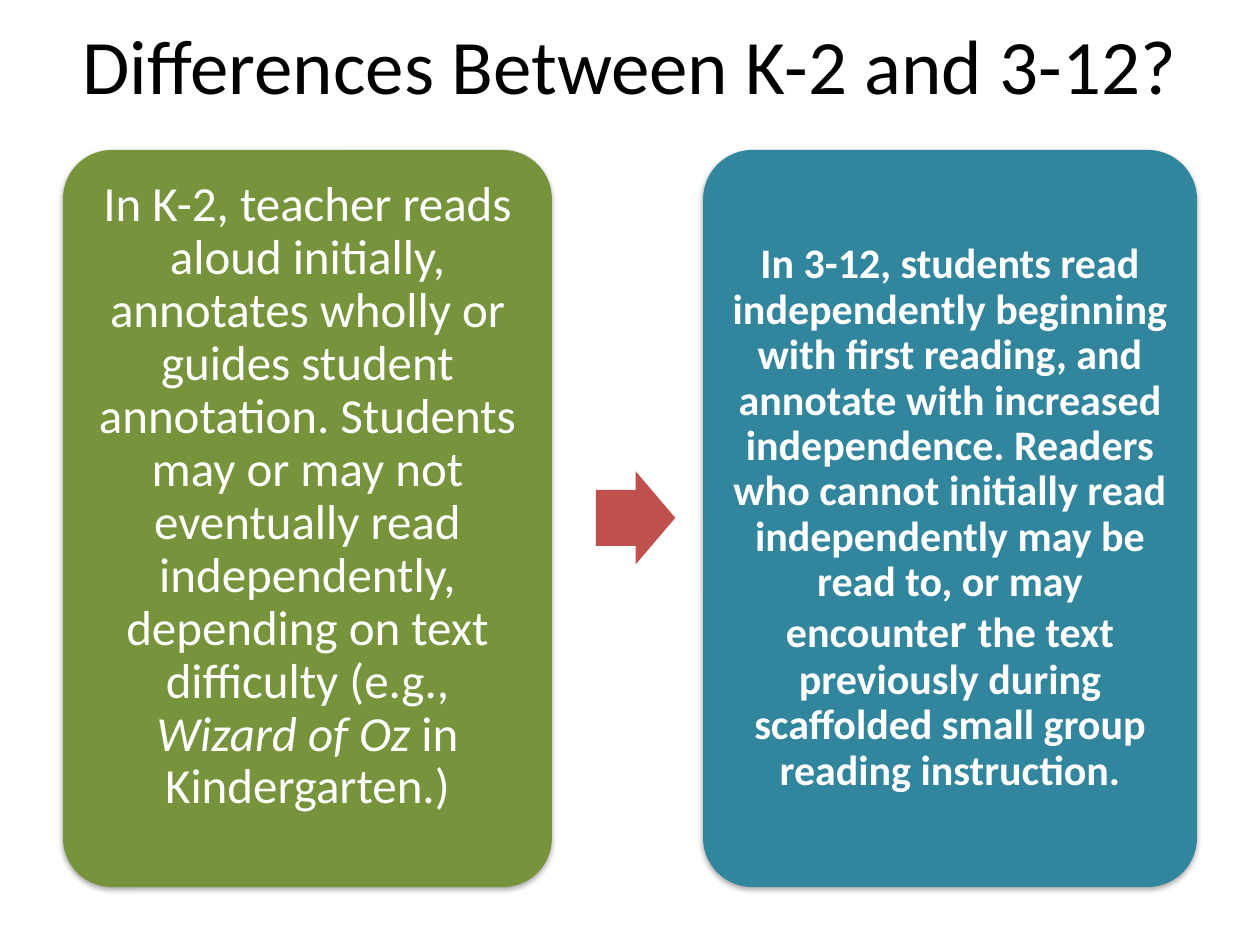
from lxml import etree
from pptx import Presentation
from pptx.dml.color import RGBColor
from pptx.enum.shapes import MSO_SHAPE
from pptx.enum.text import MSO_ANCHOR, PP_ALIGN
from pptx.oxml import parse_xml
from pptx.oxml.ns import nsdecls
from pptx.util import Inches, Pt

ROUNDED, ARROW = MSO_SHAPE.ROUNDED_RECTANGLE, MSO_SHAPE.RIGHT_ARROW
TOP, MIDDLE = MSO_ANCHOR.TOP, MSO_ANCHOR.MIDDLE
CENTER = PP_ALIGN.CENTER

BLACK = RGBColor(0x00, 0x00, 0x00)
WHITE = RGBColor(0xFF, 0xFF, 0xFF)
GREEN = RGBColor(0x77, 0x93, 0x3C)
TEAL = RGBColor(0x31, 0x85, 0x9C)
RED = RGBColor(0xC0, 0x50, 0x4D)
FONT = "Calibri"

SHADOW = (
    f'<a:effectLst {nsdecls("a")}><a:outerShdw blurRad="{Pt(3.1)}" dist="{Pt(1.8)}" '
    'dir="5400000" rotWithShape="0"><a:srgbClr val="000000"><a:alpha val="35000"/>'
    '</a:srgbClr></a:outerShdw></a:effectLst>'
)


def add_block(kind, left, top, width, height, color):
    block = slide.shapes.add_shape(
        kind, Inches(left), Inches(top), Inches(width), Inches(height))
    block.shadow.inherit = False
    block.fill.solid()
    block.fill.fore_color.rgb = color
    block.line.fill.background()
    return block


prs = Presentation()
prs.slide_width, prs.slide_height = Inches(10), Inches(7.5)
slide = prs.slides.add_slide(prs.slide_layouts[5])

# Title
title = slide.shapes.title
title.left, title.top = Inches(0.5), Inches(-0.12)
title.width, title.height = Inches(9), Inches(1.25)
title.text_frame.text = "Differences Between K-2 and 3-12?"
title.text_frame.vertical_anchor = MIDDLE
heading = title.text_frame.paragraphs[0]
heading.alignment = CENTER
heading.font.name, heading.font.size = FONT, Pt(44)
heading.font.color.rgb = BLACK

# Grade bands: left, width, colour, anchor, inset, size, bold, runs (text, size, italic)
grade_bands = [
    (0.5, 3.88, GREEN, TOP, 0.12, 28, False, [
        ("In K-2, teacher reads aloud initially, annotates wholly or guides student "
         "annotation. Students may or may not eventually read independently, "
         "depending on text difficulty (e.g., ", None, None),
        ("Wizard of Oz ", None, True),
        ("in Kindergarten.)", None, None)]),
    (5.58, 3.92, TEAL, MIDDLE, 0.1, 24, True, [
        ("In 3-12, students read independently beginning with first reading, and "
         "annotate with increased independence. Readers who cannot initially read "
         "independently may be read to, or may encounte", None, None),
        ("r ", 28, None),
        ("the text previously during scaffolded small group reading instruction.",
         None, None)]),
]
for left, width, color, anchor, inset, size, bold, runs in grade_bands:
    card = add_block(ROUNDED, left, 1.19, width, 5.85, color)
    card.adjustments[0] = 0.1
    properties = card.fill._xPr
    properties.replace(properties.find("{*}effectLst"), parse_xml(SHADOW))

    frame = card.text_frame
    frame.word_wrap = True
    frame.vertical_anchor = anchor
    frame.margin_left = frame.margin_right = Inches(inset)
    frame.margin_top = frame.margin_bottom = Inches(inset)
    description = frame.paragraphs[0]
    description.alignment = CENTER
    description.line_spacing = 0.9
    description.font.name, description.font.size = FONT, Pt(size)
    description.font.bold = bold
    description.font.color.rgb = WHITE
    for text, run_size, italic in runs:
        run = description.add_run()
        run.text = text
        run.font.italic = italic
        if run_size:
            run.font.size = Pt(run_size)

# Arrow from the first band to the second
arrow = add_block(ARROW, 4.73, 3.74, 0.63, 0.74, RED)
arrow.adjustments[0], arrow.adjustments[1] = 0.6, 0.5

prs.save("out.pptx")
